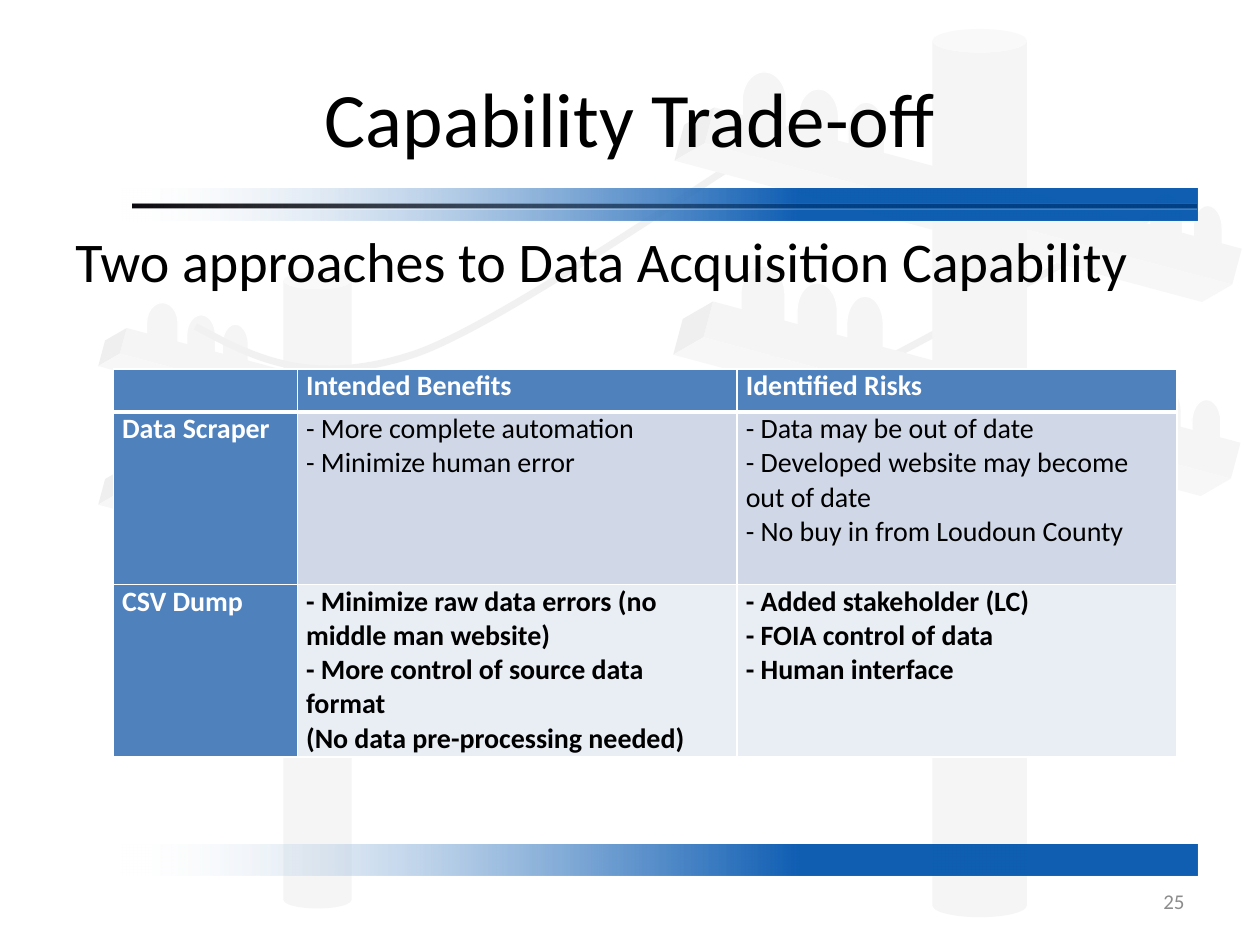
from lxml.etree import SubElement
from pptx import Presentation
from pptx.dml.color import RGBColor
from pptx.enum.shapes import MSO_SHAPE as Preset
from pptx.enum.text import MSO_ANCHOR as Anchor, PP_ALIGN as Align
from pptx.oxml import parse_xml
from pptx.oxml.ns import qn
from pptx.util import Inches, Pt

THEME = {
    "font": "Calibri",
    "white": RGBColor(0xFF, 0xFF, 0xFF),
    "black": RGBColor(0, 0, 0),
    "pole": RGBColor(0xBF, 0xBF, 0xBF),
    "wire": RGBColor(0xA6, 0xA6, 0xA6),
    "number": RGBColor(0x8C, 0x8C, 0x8C),
    "header": RGBColor(0x4F, 0x81, 0xBD),
    "bands": [RGBColor(0xD0, 0xD8, 0xE8), RGBColor(0xE9, 0xED, 0xF4)],
    "blue_fade": [(5, "FFFFFF", 0), (65, "0054AF", 75)],
    "rule_fade": [(0, "FFFFFF", 100), (23, "08060A", 100), (75, "08060A", 100), (100, "FFFFFF", 100)],
    "title_size": Pt(44),
    "body_size": Pt(32),
    "table_size": Pt(16),
    "number_size": Pt(12),
}
DRAWING_NS = 'xmlns:a="http://schemas.openxmlformats.org/drawingml/2006/main"'

presentation = Presentation()
presentation.slide_width = Inches(10)
presentation.slide_height = Inches(7.5)
slide = presentation.slides.add_slide(presentation.slide_layouts[6])


def add_preset(preset, box, fill, outlined=False, rotation=0):
    shape = slide.shapes.add_shape(preset, *map(Inches, box))
    shape.shadow.inherit = False
    shape.rotation = rotation
    shape.fill.solid()
    shape.fill.fore_color.rgb = fill
    if outlined:
        shape.line.color.rgb = THEME["white"]
        shape.line.width = Pt(0.75)
    else:
        shape.line.fill.background()
    return shape


def add_crossarm(left, top, scale):
    insulators = [
        (0.5, -0.76, 0.45, 0.35),
        (0.93, -0.61, 0.45, 0.32),
        (1.31, -0.49, 0.45, 0.29),
        (3.74, 0.2, 0.35, 0.26),
        (4.07, 0.31, 0.35, 0.23),
    ]
    for x, y, width, height in insulators:
        box = (left + x * scale, top + y * scale, width * scale, height * scale)
        add_preset(Preset.FLOWCHART_DELAY, box, THEME["pole"], True, 270)
    arm = add_preset(Preset.CUBE, (left, top, 4.53 * scale, 0.49 * scale), THEME["pole"], rotation=15)
    arm.adjustments[0] = 0.4
    for flip in ("flipH", "flipV"):
        arm.element.spPr.xfrm.set(flip, "1")


add_preset(Preset.CAN, (2.25, 2.16, 0.54, 5.05), THEME["pole"])
for top in (4.08, 2.98):
    add_crossarm(0.77, top, 0.715)

wires = [
    [(1.63, 3.78), (2.31, 4.42), (3, 5.07), (3.82, 4.84), (4.63, 4.62), (6.13, 2.75), (6.54, 2.45)],
    [(3.56, 4.27), (4.42, 4.79), (5.28, 5.31), (6.22, 5.14), (7.17, 4.96), (8.8, 3.37), (9.25, 3.24)],
    [(1.55, 2.59), (2.01, 2.84), (2.47, 3.08), (3.29, 2.81), (4.11, 2.53), (6.36, 0.89), (6.46, 0.93)],
    [(3.58, 3.16), (4.1, 3.46), (4.63, 3.75), (5.57, 3.5), (6.52, 3.25), (9, 1.72), (9.25, 1.68)],
]
for points in wires:
    start, *anchors = [tuple(map(Inches, point)) for point in points[::3]]
    builder = slide.shapes.build_freeform(*start)
    builder.add_line_segments(anchors, close=False)
    wire = builder.convert_to_shape()
    wire.shadow.inherit = False
    wire.fill.background()
    wire.line.color.rgb = THEME["wire"]
    wire.line.width = Pt(4)
    for index, segment in enumerate(list(wire.element.iter(qn("a:lnTo")))):
        outline = segment.getparent()
        outline.remove(segment)
        curve = SubElement(outline, qn("a:cubicBezTo"))
        for x, y in points[3 * index + 1:3 * index + 4]:
            SubElement(curve, qn("a:pt"), x=str(Inches(x) - wire.left), y=str(Inches(y) - wire.top))

for left, top in ((5.33, 2.92), (5.34, 1.38)):
    add_crossarm(left, top, 1)
add_preset(Preset.CAN, (7.4, 0.23, 0.75, 7.05), THEME["pole"])

veil = add_preset(Preset.RECTANGLE, (0, 0, 10, 7.5), THEME["white"], True)
veil_color = veil.element.spPr.find(qn("a:solidFill")).find(qn("a:srgbClr"))
SubElement(veil_color, qn("a:alpha"), val="85000")

bars = [
    ((1.05, 1.61, 8.45, 0.05), "rule_fade", 90),
    ((0.5, 1.5, 9, 0.25), "blue_fade", 0),
    ((0.5, 6.7, 9, 0.25), "blue_fade", 0),
]
for box, fade, angle in bars * 2:
    bar = add_preset(Preset.RECTANGLE, box, THEME["white"])
    stops = "".join(
        f'<a:gs pos="{position * 1000}"><a:srgbClr val="{color}"><a:alpha val="{alpha * 1000}"/></a:srgbClr></a:gs>'
        for position, color, alpha in THEME[fade]
    )
    gradient = parse_xml(
        f'<a:gradFill {DRAWING_NS} rotWithShape="1"><a:gsLst>{stops}</a:gsLst>'
        f'<a:lin ang="{angle * 60000}" scaled="0"/></a:gradFill>'
    )
    properties = bar.element.spPr
    properties.replace(properties.find(qn("a:solidFill")), gradient)

texts = [
    ("Capability Trade-off", (0.5, 0.3, 9, 1.25), Anchor.MIDDLE, Align.CENTER, "title_size", "black"),
    ("Two approaches to Data Acquisition Capability", (0.5, 1.75, 9, 0.68), Anchor.TOP, Align.LEFT, "body_size", "black"),
    ("25", (7.17, 6.95, 2.33, 0.4), Anchor.MIDDLE, Align.RIGHT, "number_size", "number"),
]
for text, box, anchor, alignment, size, color in texts:
    frame = slide.shapes.add_textbox(*map(Inches, box)).text_frame
    frame.word_wrap = True
    frame.vertical_anchor = anchor
    paragraph = frame.paragraphs[0]
    paragraph.alignment = alignment
    run = paragraph.add_run()
    run.text = text
    for name, value in {"name": THEME["font"], "size": THEME[size]}.items():
        setattr(run.font, name, value)
    run.font.color.rgb = THEME[color]

rows = [
    ["", "Intended Benefits", "Identified Risks"],
    [
        "Data Scraper",
        "- More complete automation\n- Minimize human error",
        "- Data may be out of date\n- Developed website may become out of date\n- No buy in from Loudoun County",
    ],
    [
        "CSV Dump",
        "- Minimize raw data errors (no middle man website)\n- More control of source data format\n"
        "(No data pre-processing needed)",
        "- Added stakeholder (LC)\n- FOIA control of data\n- Human interface",
    ],
]
table = slide.shapes.add_table(3, 3, *map(Inches, (0.9, 2.93, 8.44, 3.08))).table
for column, width in zip(table.columns, (1.46, 3.49, 3.49)):
    column.width = Inches(width)
for row, height in zip(table.rows, (0.34, 1.37, 1.37)):
    row.height = Inches(height)
margins = {"margin_left": 0.07, "margin_right": 0.07, "margin_top": 0, "margin_bottom": 0}
for row_index, row in enumerate(rows):
    for column_index, text in enumerate(row):
        cell = table.cell(row_index, column_index)
        is_header = row_index == 0 or column_index == 0
        for name, value in margins.items():
            setattr(cell, name, Inches(value))
        for side in "LRTB":
            heavy = (row_index, side) in ((0, "B"), (1, "T"))
            cell._tc.get_or_add_tcPr().append(parse_xml(
                f'<a:ln{side} {DRAWING_NS} w="{Pt(3 if heavy else 1)}"><a:solidFill>'
                f'<a:srgbClr val="{THEME["white"]}"/></a:solidFill></a:ln{side}>'
            ))
        cell.fill.solid()
        cell.fill.fore_color.rgb = THEME["header"] if is_header else THEME["bands"][row_index - 1]
        cell.text = text
        font_values = {"name": THEME["font"], "size": THEME["table_size"], "bold": is_header or row_index == 2}
        for paragraph in cell.text_frame.paragraphs:
            for run in paragraph.runs:
                for name, value in font_values.items():
                    setattr(run.font, name, value)
                run.font.color.rgb = THEME["white" if is_header else "black"]

presentation.save("out.pptx")
